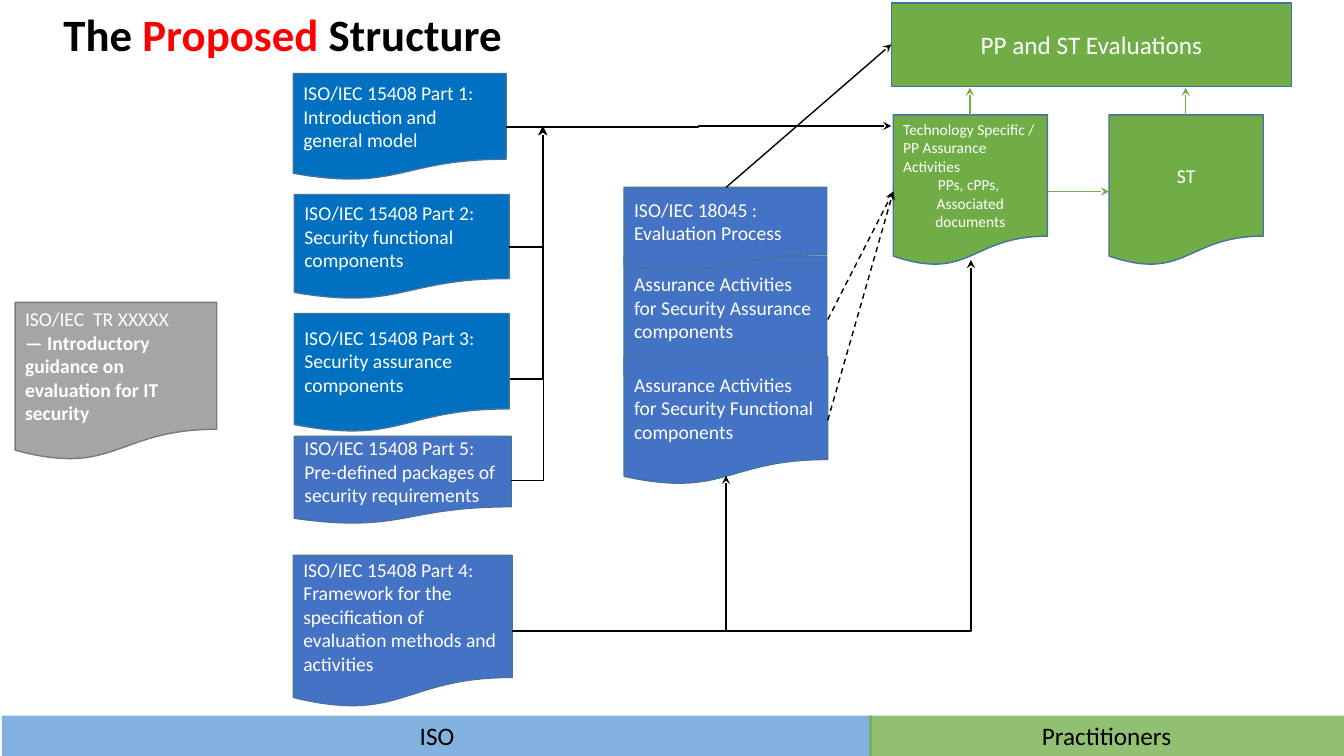
from lxml import etree
from pptx import Presentation
from pptx.dml.color import RGBColor
from pptx.enum.dml import MSO_LINE
from pptx.enum.shapes import MSO_CONNECTOR, MSO_SHAPE
from pptx.enum.text import MSO_ANCHOR, PP_ALIGN
from pptx.oxml.ns import qn
from pptx.util import Pt

PX = 9144  # 100 px to the inch
DOCUMENT, RECTANGLE = MSO_SHAPE.FLOWCHART_DOCUMENT, MSO_SHAPE.RECTANGLE
STRAIGHT, ELBOW = MSO_CONNECTOR.STRAIGHT, MSO_CONNECTOR.ELBOW
LEFT, CENTER = PP_ALIGN.LEFT, PP_ALIGN.CENTER
TOP, MIDDLE = MSO_ANCHOR.TOP, MSO_ANCHOR.MIDDLE
DASH = MSO_LINE.DASH

BLACK = RGBColor(0x00, 0x00, 0x00)
WHITE = RGBColor(0xFF, 0xFF, 0xFF)
RED = RGBColor(0xFF, 0x00, 0x00)
BLUE = RGBColor(0x00, 0x70, 0xC0)
INDIGO = RGBColor(0x44, 0x72, 0xC4)
SKY = RGBColor(0x5B, 0x9B, 0xD5)
GREEN = RGBColor(0x70, 0xAD, 0x47)
GRAY = RGBColor(0xA5, 0xA5, 0xA5)
BLUE_EDGE = RGBColor(0x43, 0x73, 0x9E)
GRAY_EDGE = RGBColor(0x7A, 0x7A, 0x7A)

# left, top, width, height, fill, text
ISO_DOCUMENTS = [
    (291, 73, 211, 106, BLUE, "ISO/IEC 15408 Part 1: Introduction and general model"),
    (292, 193, 213, 104, BLUE, "ISO/IEC 15408 Part 2: Security functional components"),
    (292, 311, 213, 118, BLUE, "ISO/IEC 15408 Part 3: Security assurance components"),
    (292, 433, 215, 87, INDIGO,
     "ISO/IEC 15408 Part 5: Pre-defined packages of security requirements"),
    (291, 551, 217, 151, INDIGO,
     "ISO/IEC 15408 Part 4: Framework for the specification of evaluation methods and activities"),
    (619, 254, 201, 127, INDIGO, "Assurance Activities for Security Assurance components"),
    (619, 186, 201, 83, INDIGO, "ISO/IEC 18045 : Evaluation Process"),
    (619, 354, 202, 127, INDIGO, "Assurance Activities for Security Functional components"),
]


def style_span(span, size, color, bold=False):
    span.font.name = "Calibri"
    span.font.size = Pt(size)
    span.font.bold = bold
    span.font.color.rgb = color


def add_box(page, kind, bounds, fill, text, edge=BLUE_EDGE, size=14,
            color=WHITE, align=LEFT, anchor=MIDDLE):
    box = page.shapes.add_shape(kind, *(length * PX for length in bounds))
    box.shadow.inherit = False
    box.fill.solid()
    box.fill.fore_color.rgb = fill
    if edge is None:
        box.line.fill.background()
    else:
        box.line.color.rgb = edge
        box.line.width = Pt(1)
    frame = box.text_frame
    frame.word_wrap = True
    frame.vertical_anchor = anchor
    frame.text = text
    for para in frame.paragraphs:
        para.alignment = align
        for span in para.runs:
            style_span(span, size, color)
    return box


def add_band(page, bounds, fill, text):
    band = add_box(page, RECTANGLE, bounds, fill, text, edge=None, size=18,
                   color=BLACK, align=CENTER, anchor=TOP)
    color = band.element.spPr.find(qn("a:solidFill")).find(qn("a:srgbClr"))
    etree.SubElement(color, qn("a:alpha"), val="76000")


def add_arrow(page, start, end, color=BLACK, kind=STRAIGHT, dash=None):
    arrow = page.shapes.add_connector(kind, *(value * PX for value in start + end))
    arrow.line.color.rgb = color
    arrow.line.width = Pt(1)
    if dash is not None:
        arrow.line.dash_style = dash
    properties = arrow.element.spPr
    etree.SubElement(properties.find(qn("a:ln")), qn("a:tailEnd"), type="stealth")
    etree.SubElement(properties, qn("a:effectLst"))
    return arrow


def add_corner_arrow(page, start, end):
    """Run sideways from the start, then turn once towards the end."""
    arrow = add_arrow(page, start, end, kind=ELBOW)
    arrow.element.spPr.find(qn("a:prstGeom")).set("prst", "bentConnector2")


def add_title(page):
    box = page.shapes.add_textbox(53 * PX, 2 * PX, 468 * PX, 64 * PX)
    box.text_frame.word_wrap = True
    para = box.text_frame.paragraphs[0]
    for text, color in (("The ", BLACK), ("Proposed ", RED), ("Structure", BLACK)):
        span = para.add_run()
        span.text = text
        style_span(span, 32, color, bold=True)


def main():
    deck = Presentation()
    deck.slide_width, deck.slide_height = 1333 * PX, 750 * PX
    page = deck.slides.add_slide(deck.slide_layouts[6])

    # Standards
    for *bounds, fill, text in ISO_DOCUMENTS:
        add_box(page, DOCUMENT, bounds, fill, text)
    guidance = add_box(
        page, DOCUMENT, (15, 300, 200, 157), GRAY,
        "ISO/IEC  TR XXXXX\n— Introductory guidance on evaluation for IT security",
        edge=GRAY_EDGE)
    guidance.text_frame.paragraphs[1].runs[0].font.bold = True

    # Evaluations
    add_box(page, RECTANGLE, (884, 3, 397, 83), GREEN, "PP and ST Evaluations",
            size=18, align=CENTER)
    add_box(page, DOCUMENT, (1100, 114, 153, 150), GREEN, "ST", align=CENTER)
    technology = add_box(
        page, DOCUMENT, (886, 114, 153, 150), GREEN,
        "Technology Specific / PP Assurance Activities\nPPs, cPPs, \nAssociated documents",
        size=11)
    for para in technology.text_frame.paragraphs[1:]:
        para.alignment = CENTER

    # Bands along the bottom
    add_band(page, (2, 710, 863, 40), SKY, "ISO")
    add_band(page, (862, 710, 471, 40), GREEN, "Practitioners")

    # Arrows from the standards
    add_arrow(page, (502, 126), (884, 125), kind=ELBOW)
    for start, end in (((505, 245), (538, 126)), ((506, 376), (538, 126)),
                       ((507, 477), (539, 126)), ((508, 626), (720, 472)),
                       ((508, 626), (963, 258))):
        add_corner_arrow(page, start, end)
    add_arrow(page, (720, 186), (884, 44))
    for top in (317, 417):
        add_arrow(page, (821, top), (886, 190), dash=DASH)

    # Arrows between the evaluations
    for start, end in (((1039, 190), (1100, 190)), ((962, 114), (962, 87)),
                       ((1176, 114), (1176, 87))):
        add_arrow(page, start, end, GREEN)

    add_title(page)
    deck.save("out.pptx")


if __name__ == "__main__":
    main()
